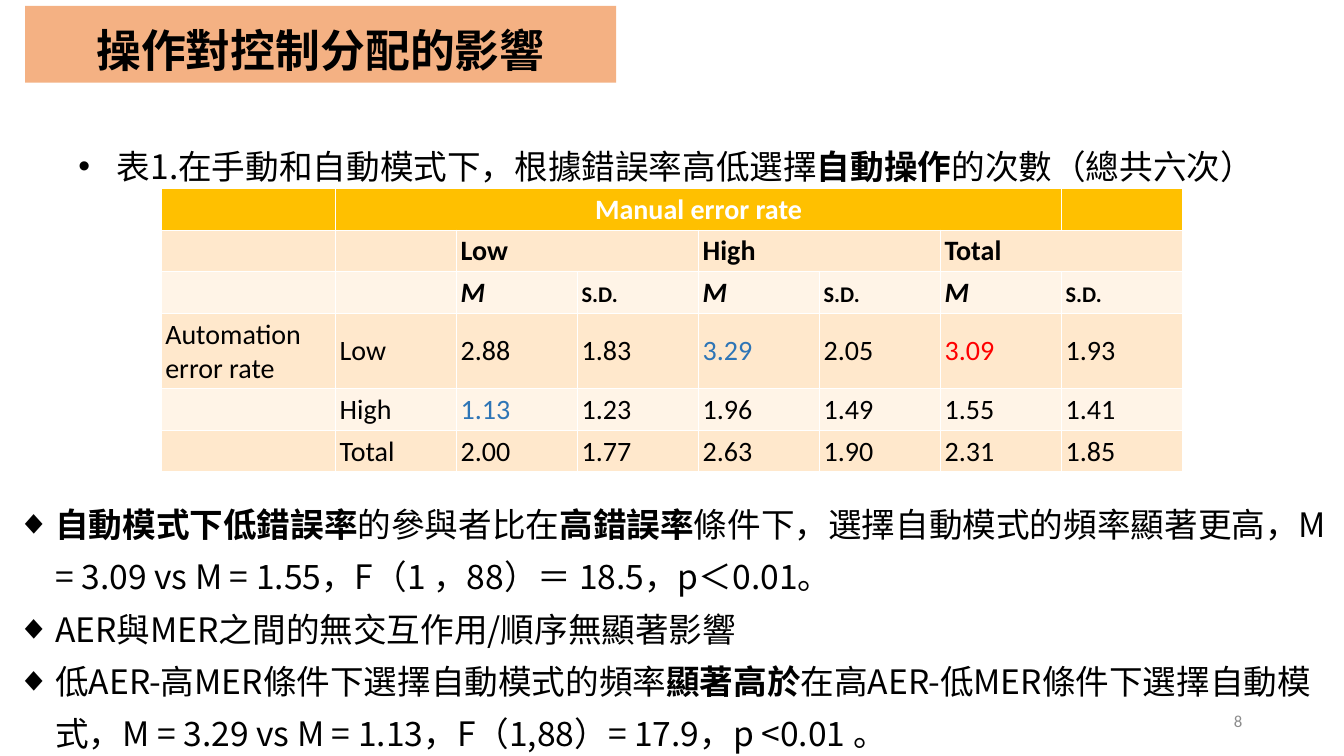
from lxml import etree
from pptx import Presentation
from pptx import util as u
from pptx.dml.color import RGBColor
from pptx.enum import shapes, text
from pptx.oxml.ns import qn

BLACK = RGBColor(0x00, 0x00, 0x00)
WHITE = RGBColor(0xFF, 0xFF, 0xFF)
GREY = RGBColor(0x8C, 0x8C, 0x8C)
SALMON = RGBColor(0xF4, 0xB1, 0x83)
GOLD = RGBColor(0xFF, 0xC0, 0x00)
PEACH = RGBColor(0xFF, 0xE8, 0xCC)
CREAM = RGBColor(0xFF, 0xF4, 0xE7)
BLUE = RGBColor(0x2E, 0x75, 0xB6)
RED = RGBColor(0xFF, 0x00, 0x00)
CJK = "Noto Sans CJK SC"
LATIN = "Calibri"

deck = Presentation()
deck.slide_width = u.Inches(13.33)
deck.slide_height = u.Inches(7.5)
page = deck.slides.add_slide(deck.slide_layouts[6])


def area(left, top, width, height):
    across, down = deck.slide_width / 100, deck.slide_height / 100
    return [round(n) for n in (left * across, top * down, width * across, height * down)]


def add_span(para, words, size=24, font=CJK, color=BLACK, bold=False, italic=False, small=False):
    span = para.add_run()
    span.text = words
    span.font.size = u.Pt(size)
    span.font.name = font
    span.font.color.rgb = color
    span.font.bold = bold
    span.font.italic = italic
    props = span._r.get_or_add_rPr()
    etree.SubElement(props, qn("a:ea")).set("typeface", font)
    if small:
        props.set("cap", "small")


title = page.shapes.add_shape(shapes.MSO_SHAPE.RECTANGLE, *area(1.88, 0.8, 43.96, 10.13))
title.shadow.inherit = False
title.fill.solid()
title.fill.fore_color.rgb = SALMON
title.line.fill.background()
title.text_frame.vertical_anchor = text.MSO_ANCHOR.BOTTOM
para = title.text_frame.paragraphs[0]
para.alignment = text.PP_ALIGN.CENTER
para.line_spacing = 0.9
add_span(para, "操作對控制分配的影響", size=32, bold=True)

caption = [[("表1.在手動和自動模式下，根據錯誤率高低選擇", False), ("自動操作", True), ("的次數（總共六次）", False)]]
findings = [
    [
        ("自動模式下低錯誤率", True),
        ("的參與者比在", False),
        ("高錯誤率", True),
        ("條件下，選擇自動模式的頻率顯著更高，M = 3.09 vs M = 1.55，F（1 ，88）＝ 18.5，p＜0.01。", False),
    ],
    [("AER與MER之間的無交互作用/順序無顯著影響", False)],
    [
        ("低AER-高MER條件下選擇自動模式的頻率", False),
        ("顯著高於", True),
        ("在高AER-低MER條件下選擇自動模式，M = 3.29 vs M = 1.13，F（1,88）= 17.9，p <0.01 。", False),
    ],
]
lists = [
    (area(5.1, 17.6, 93.25, 7.33), caption, "•", 1.2, 10),
    (area(0.53, 64.4, 99.02, 36.4), findings, "◆", 1.3, 0),
]
for place, items, bullet, spacing, before in lists:
    box = page.shapes.add_textbox(*place)
    box.text_frame.word_wrap = True
    for index, pieces in enumerate(items):
        para = box.text_frame.paragraphs[0] if index == 0 else box.text_frame.add_paragraph()
        para.line_spacing = spacing
        para.space_before = u.Pt(before)
        props = para._p.get_or_add_pPr()
        props.set("marL", str(u.Inches(0.38)))
        props.set("indent", str(-u.Inches(0.38)))
        etree.SubElement(props, qn("a:buFont")).set("typeface", "Arial")
        etree.SubElement(props, qn("a:buChar")).set("char", bullet)
        for words, bold in pieces:
            add_span(para, words, bold=bold)

number = page.shapes.add_textbox(*area(70.67, 92.67, 22.5, 5.33))
number.text_frame.word_wrap = True
number.text_frame.vertical_anchor = text.MSO_ANCHOR.MIDDLE
para = number.text_frame.paragraphs[0]
para.alignment = text.PP_ALIGN.RIGHT
add_span(para, "8", size=12, font=LATIN, color=GREY)

rows = [
    ["", "Manual error rate", "", "", "", "", "", ""],
    ["", "", "Low", "", "High", "", "Total", ""],
    ["", ""] + ["M", "s.d."] * 3,
    ["Automation error rate", "Low", "2.88", "1.83", "3.29", "2.05", "3.09", "1.93"],
    ["", "High", "1.13", "1.23", "1.96", "1.49", "1.55", "1.41"],
    ["", "Total", "2.00", "1.77", "2.63", "1.90", "2.31", "1.85"],
]
highlights = {"3.29": BLUE, "1.13": BLUE, "3.09": RED}
heading_rows = 3
table = page.shapes.add_table(len(rows), len(rows[0]), *area(12, 24.93, 75.98, 32.8)).table
for index, column in enumerate(table.columns):
    column.width = u.Inches(1.73 if index == 0 else 1.2)
for r, row in enumerate(rows):
    for c, words in enumerate(row):
        cell = table.cell(r, c)
        cell.fill.solid()
        cell.fill.fore_color.rgb = GOLD if r == 0 else PEACH if r % 2 else CREAM
        cell.vertical_anchor = text.MSO_ANCHOR.MIDDLE
        cell.margin_left = cell.margin_right = u.Inches(0.04)
        cell.margin_top = cell.margin_bottom = u.Inches(0.04)
        para = cell.text_frame.paragraphs[0]
        if words:
            add_span(
                para,
                words,
                size=20,
                font=LATIN,
                color=WHITE if r == 0 else highlights.get(words, BLACK),
                bold=r < heading_rows,
                italic=words == "M",
                small=words == "s.d.",
            )
table.cell(0, 1).text_frame.paragraphs[0].alignment = text.PP_ALIGN.CENTER
table.cell(0, 1).merge(table.cell(0, 6))
for c in range(2, 8, 2):
    table.cell(1, c).merge(table.cell(1, c + 1))

deck.save("out.pptx")
